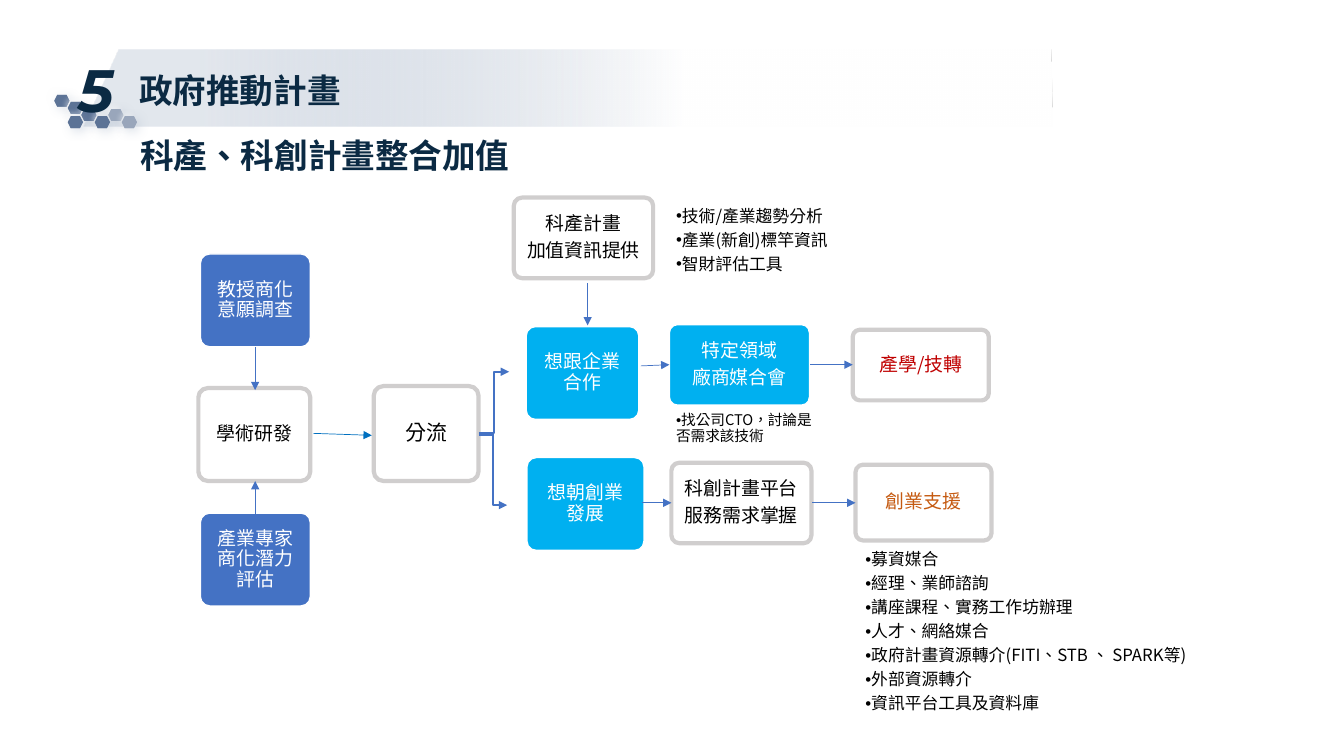
from lxml import etree
from pptx import Presentation
from pptx.dml.color import RGBColor
from pptx.enum import shapes, text
from pptx.oxml.ns import qn
from pptx.util import Cm, Pt

FONT = "Noto Sans CJK SC"
COLOURS = {
    "navy": "0B2A43", "blue": "4472C4", "cyan": "00B0F0", "link": "0070C0",
    "grey": "D0CECE", "white": "FFFFFF", "black": "000000",
    "red": "C00000", "orange": "C55A11",
    "mist": "A2B1C6", "slate": "5C7396", "haze": "99A6BB",
}
HEXAGONS = [  # column, row, colour
    (0, 0, "slate"), (1, 1, "slate"), (2, 2, "slate"), (4, 2, "haze"),
    (5, 3, "haze"), (1, 3, "slate"), (3, 3, "slate"),
]
SHADOWS = [("mist", 8, 45), ("white", 4, 225)]  # colour, blur, direction
BOXES = [  # wording, fill, text colour, size, left, top, width, height
    ("教授商化意願調查", "blue", "white", 13.5, 5.05, 6.4, 2.77, 2.34),
    ("產業專家商化潛力評估", "blue", "white", 13.5, 5.05, 12.93, 2.77, 2.34),
    ("學術研發", None, "black", 13.5, 5, 9.78, 2.82, 2.34),
    ("分流", None, "black", 15, 9.42, 9.73, 2.64, 2.39),
    ("科產計畫\n加值資訊提供", None, "black", 13.5, 12.95, 4.98, 3.51, 2.03),
    ("想跟企業合作", "cyan", "white", 13.5, 13.26, 8.23, 2.84, 2.34),
    ("想朝創業發展", "cyan", "white", 13.5, 13.28, 11.53, 2.95, 2.34),
    ("特定領域\n廠商媒合會", "cyan", "white", 13.5, 16.87, 8.18, 3.53, 2.03),
    ("科創計畫平台\n服務需求掌握", None, "black", 13.5, 16.92, 11.66, 3.53, 2.03),
    ("產學/技轉", None, "red", 13.5, 21.49, 8.31, 3.43, 1.78),
    ("創業支援", None, "orange", 13.5, 21.56, 11.71, 3.43, 1.91),
]
LISTS = [  # wording, size, left, top, width, height
    ("技術/產業趨勢分析\n產業(新創)標竿資訊\n智財評估工具", 12, 16.79, 5.11, 5.84, 2.01),
    ("找公司CTO，討論是否需求該技術", 10.5, 16.79, 10.29, 4.06, 1.6),
    ("募資媒合\n經理、業師諮詢\n講座課程、實務工作坊辦理\n人才、網絡媒合\n"
     "政府計畫資源轉介(FITI、STB 、 SPARK等)\n外部資源轉介\n資訊平台工具及資料庫",
     12, 21.56, 13.77, 9.78, 4.57),
]
ARROWS = [  # start x, start y, end x, end y, colour
    (6.43, 8.74, 6.43, 9.83, "blue"),
    (6.43, 13, 6.43, 12.12, "blue"),
    (7.9, 10.92, 9.37, 10.97, "link"),
    (14.81, 7.14, 14.81, 8.2, "blue"),
    (16.15, 9.22, 16.87, 9.19, "blue"),
    (20.42, 9.19, 21.49, 9.19, "blue"),
    (16.18, 12.67, 16.92, 12.67, "blue"),
    (20.47, 12.67, 21.56, 12.67, "blue"),
]
BRANCHES = [(12.07, 10.92, 12.83, 9.37, "blue"), (12.07, 10.95, 12.78, 12.73, "blue")]


def colour(name):
    return RGBColor.from_string(COLOURS[name])


def lengths(*values):
    return [Cm(value) for value in values]


def apply(target, formats):
    for name, value in formats.items():
        setattr(target, name, value)


def add_child(parent, tag, **attributes):
    return etree.SubElement(parent, qn(tag), attributes)


def write(box, wording, size, ink, frame=None, para_format=None,
          bullet=False, font=FONT, **font_format):
    """Fill a box with one paragraph per line of the wording."""
    text_frame = box.text_frame
    apply(text_frame, {"word_wrap": True, **(frame or {})})
    for index, line in enumerate(wording.split("\n")):
        para = text_frame.add_paragraph() if index else text_frame.paragraphs[0]
        if bullet:
            props = para._p.get_or_add_pPr()
            apply(props, {"marL": Cm(0.38), "indent": Cm(-0.38)})
            add_child(props, "a:buFont", typeface="Arial")
            add_child(props, "a:buChar", char="•")
        apply(para, para_format or {})
        span = para.add_run()
        span.text = line
        apply(span.font, {"size": Pt(size), "name": font, **font_format})
        span.font.color.rgb = colour(ink)
        run_props = span._r.get_or_add_rPr()
        run_props.set("lang", "zh-TW")
        add_child(run_props, "a:ea", typeface=font)


def flow_format(size, align):
    return {"alignment": align, "line_spacing": 0.9, "space_after": Pt(round(size * 0.35, 2))}


def add_band(page):
    builder = page.shapes.build_freeform(Cm(2.11), Cm(3.18))
    builder.add_line_segments([lengths(*point) for point in
                               [(3, 1.26), (26.47, 1.26), (26.52, 3.19)]])
    band = builder.convert_to_shape()
    band.shadow.inherit = False
    band.line.fill.background()
    band.fill.gradient()
    band.fill.gradient_angle = 180
    for stop, (position, name) in zip(band.fill.gradient_stops, [(0.38, "white"), (0.88, "mist")]):
        stop.position = position
        stop.color.rgb = colour(name)
    tint = band._element.spPr.findall(".//" + qn("a:srgbClr"))[-1]
    add_child(tint, "a:alpha", val="30000")


def add_hexagon(page, column, row, fill, shadow):
    tile = page.shapes.add_shape(shapes.MSO_SHAPE.HEXAGON, *lengths(
        1.37 + 0.34 * column, 2.39 + 0.18 * row, 0.38, 0.3))
    tile.fill.solid()
    tile.fill.fore_color.rgb = colour(fill)
    tile.line.fill.background()
    name, blur, direction = shadow
    effects = add_child(tile._element.spPr, "a:effectLst")
    outer = add_child(effects, "a:outerShdw", blurRad=str(Pt(blur)), dist=str(Pt(3)),
                      dir=str(direction * 60000), algn="ctr", rotWithShape="0")
    tint = add_child(outer, "a:srgbClr", val=COLOURS[name])
    add_child(tint, "a:alpha", val="40000")


def add_heading(page):
    title = page.shapes.title
    page.shapes._spTree.append(title._element)
    apply(title, dict(zip(("left", "top", "width", "height"), lengths(3.25, 1.19, 15.39, 1.63))))
    left = text.PP_ALIGN.LEFT
    fit = {"auto_size": text.MSO_AUTO_SIZE.SHAPE_TO_FIT_TEXT}
    write(title, "政府推動計畫", 24, "navy", {"vertical_anchor": text.MSO_ANCHOR.MIDDLE, **fit},
          {"alignment": left, "line_spacing": 1.5}, bold=True)
    subtitle = page.shapes.add_textbox(*lengths(3.28, 3.28, 19.05, 1.27))
    write(subtitle, "科產、科創計畫整合加值", 24, "navy", fit, {"alignment": left}, bold=True)
    number = page.shapes.add_textbox(*lengths(1.22, 1.17, 2.39, 2.13))
    write(number, "5", 42.7, "navy",
          {"vertical_anchor": text.MSO_ANCHOR.MIDDLE, "margin_left": 0, "margin_right": 0},
          {"alignment": text.PP_ALIGN.CENTER}, font="Montserrat", bold=True, italic=True)


def add_box(page, wording, fill, ink, size, *place):
    box = page.shapes.add_shape(shapes.MSO_SHAPE.ROUNDED_RECTANGLE, *lengths(*place))
    box.adjustments[0] = 0.1
    box.shadow.inherit = False
    if fill:
        box.fill.solid()
        box.fill.fore_color.rgb = colour(fill)
    else:
        box.fill.background()
    box.line.color.rgb = colour("white" if fill else "grey")
    box.line.width = Pt(1 if fill else 3)
    side = Cm(0.3 if fill else 0.15)
    frame = {"vertical_anchor": text.MSO_ANCHOR.MIDDLE, "margin_left": side,
             "margin_right": side, "margin_top": Cm(0.15), "margin_bottom": Cm(0.15)}
    write(box, wording, size, ink, frame, flow_format(size, text.PP_ALIGN.CENTER))


def add_list(page, wording, size, *place):
    box = page.shapes.add_textbox(*lengths(*place))
    write(box, wording, size, "black", {"auto_size": text.MSO_AUTO_SIZE.SHAPE_TO_FIT_TEXT},
          flow_format(size, text.PP_ALIGN.LEFT), bullet=True)


def add_arrow(page, kind, width, *ends, ink):
    arrow = page.shapes.add_connector(kind, *lengths(*ends))
    arrow.line.color.rgb = colour(ink)
    arrow.line.width = Pt(width)
    add_child(arrow.line._get_or_add_ln(), "a:tailEnd", type="triangle")
    add_child(arrow._element.spPr, "a:effectLst")


def main():
    deck = Presentation()
    deck.slide_width, deck.slide_height = lengths(33.87, 19.05)
    page = deck.slides.add_slide(deck.slide_layouts[5])
    add_band(page)
    for hexagon in HEXAGONS:
        for shadow in SHADOWS:
            add_hexagon(page, *hexagon, shadow)
    add_heading(page)
    for box in BOXES:
        add_box(page, *box)
    for items in LISTS:
        add_list(page, *items)
    for *ends, ink in ARROWS:
        add_arrow(page, shapes.MSO_CONNECTOR.STRAIGHT, 0.5, *ends, ink=ink)
    for *ends, ink in BRANCHES:
        add_arrow(page, shapes.MSO_CONNECTOR.ELBOW, 1.5, *ends, ink=ink)
    deck.save("out.pptx")


if __name__ == "__main__":
    main()
